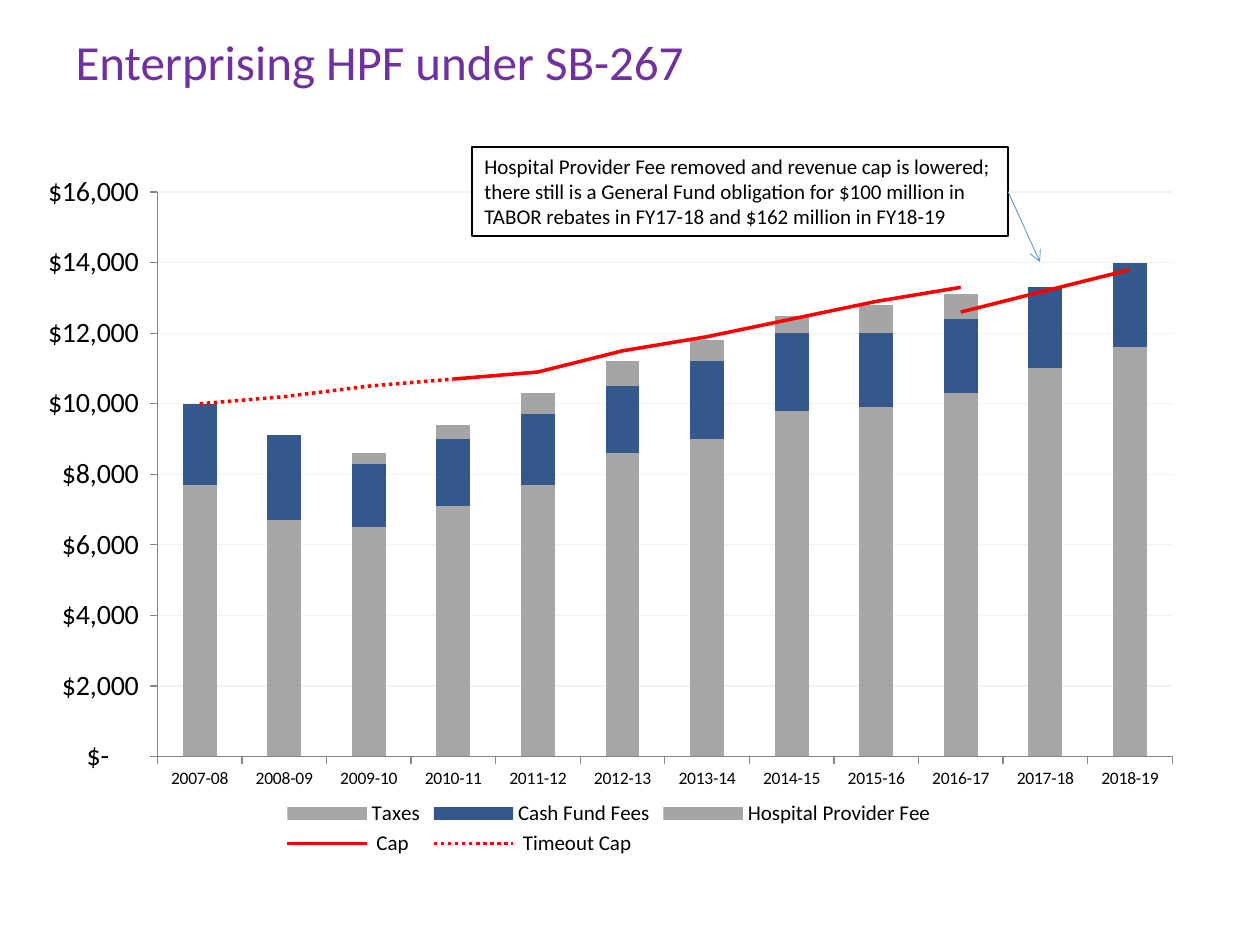
from lxml.etree import SubElement as Sub
from pptx import Presentation
from pptx.chart.data import CategoryChartData as Data
from pptx.dml.color import RGBColor as RGB
from pptx.enum.chart import XL_CHART_TYPE as Kind, XL_LEGEND_POSITION as Spot
from pptx.enum.chart import XL_MARKER_STYLE as Mark, XL_TICK_MARK as Tick
from pptx.enum.dml import MSO_LINE as Dash
from pptx.enum.shapes import MSO_CONNECTOR as Link, MSO_SHAPE as Shape
from pptx.enum.text import MSO_ANCHOR as Anchor, MSO_AUTO_SIZE as Auto, PP_ALIGN as Align
from pptx.oxml import parse_xml
from pptx.oxml.ns import nsdecls, qn
from pptx.util import Pt

SCALE = 914400 / 126
FONT = "Calibri"
MONEY = r'_("$"* #,##0_);_("$"* \(#,##0\);_("$"* "-"??_);_(@_)'
YEARS = [f"20{y:02}-{y + 1:02}" for y in range(7, 19)]
BARS = [
    ("Taxes", "A6A6A6", [7700, 6700, 6500, 7100, 7700, 8600,
                         9000, 9800, 9900, 10300, 11000, 11600]),
    ("Cash Fund Fees", "35588C", [2300, 2400, 1800, 1900, 2000, 1900,
                                  2200, 2200, 2100, 2100, 2300, 2400]),
    ("Hospital Provider Fee", "A5A5A5", [None, None, 300, 400, 600, 700,
                                         600, 500, 800, 700, 0, 0]),
]
# Each cap: name, dash, first year's index, values
CAPS = [
    (" Cap", Dash.SOLID, 3, [10700, 10900, 11500, 11900, 12400, 12900, 13300]),
    (" Timeout Cap", Dash.ROUND_DOT, 0, [10000, 10200, 10500, 10700]),
    ("SB17-267 Cap", Dash.SOLID, 9, [12600, 13200, 13800]),
]


def px(*nums):
    return [round(n * SCALE) for n in nums]


def color(code):
    return RGB.from_string(code)


def style(font, size, code="000000"):
    font.name, font.size, font.bold = FONT, Pt(size), False
    font.color.rgb = color(code)


def stroke(line, code, width):
    line.color.rgb = color(code)
    line.width = Pt(width)


def add_run(para, text, size, code):
    run = para.add_run()
    run.text = text
    style(run.font, size, code)


def add_title(slide, text):
    title = slide.shapes.title
    title.left, title.top, title.width, title.height = px(63, -14, 1134, 158)
    frame = title.text_frame
    frame.auto_size = Auto.NONE
    frame.vertical_anchor = Anchor.MIDDLE
    para = frame.paragraphs[0]
    para.alignment, para.line_spacing = Align.LEFT, 0.9
    add_run(para, text, 28, "7030A0")


def split_caps(chart):
    """Move the series after the bars into a line plot on the same axes."""
    bar = chart.plots[0]._element
    line = parse_xml(f'<c:lineChart {nsdecls("c")}><c:grouping val="standard"/>'
                     '<c:varyColors val="0"/></c:lineChart>')
    bar.addnext(line)
    for ser in bar.findall(qn("c:ser"))[len(BARS):]:
        for flag in ser.findall(qn("c:invertIfNegative")):
            ser.remove(flag)
        line.append(ser)
    Sub(line, qn("c:marker")).set("val", "1")
    for axis in bar.findall(qn("c:axId")):
        Sub(line, qn("c:axId")).set("val", axis.get("val"))


def place_plot(chart, *box):
    area = chart._chartSpace.chart.plotArea
    for old in area.findall(qn("c:layout")):
        area.remove(old)
    parts = "".join(f'<c:{tag} val="{val}"/>' for tag, val in zip("xywh", box))
    modes = '<c:xMode val="edge"/><c:yMode val="edge"/>'
    area.insert(0, parse_xml(
        f'<c:layout {nsdecls("c")}><c:manualLayout><c:layoutTarget val="inner"/>'
        f'{modes}{parts}</c:manualLayout></c:layout>'))


def set_axes(chart):
    cat, val = chart.category_axis, chart.value_axis
    for axis, size in ((cat, 10), (val, 16)):
        style(axis.tick_labels.font, size)
        axis.major_tick_mark, axis.minor_tick_mark = Tick.OUTSIDE, Tick.NONE
        stroke(axis.format.line, "868686", 0.75)
    cat.has_major_gridlines = False
    val.minimum_scale, val.maximum_scale, val.major_unit = 0, 16000, 2000
    val.tick_labels.number_format = MONEY
    val.tick_labels.number_format_is_linked = False
    stroke(val.major_gridlines.format.line, "F2F2F2", 0.75)


def set_legend(chart, hidden):
    chart.has_legend = True
    legend = chart.legend
    legend.position, legend.include_in_layout = Spot.BOTTOM, False
    style(legend.font, 12)
    entry = parse_xml(f'<c:legendEntry {nsdecls("c")}><c:idx val="{hidden}"/>'
                      '<c:delete val="1"/></c:legendEntry>')
    # An entry follows the legend position, when that is written out
    legend._element.insert(len(legend._element.findall(qn("c:legendPos"))), entry)


def add_chart(slide):
    data = Data(number_format="General")
    data.categories = YEARS
    for name, _, vals in BARS:
        data.add_series(name, vals)
    for name, _, start, vals in CAPS:
        rest = len(YEARS) - start - len(vals)
        data.add_series(name, [None] * start + vals + [None] * rest)
    chart = slide.shapes.add_chart(
        Kind.COLUMN_STACKED, *px(21, 126, 1176, 735), data).chart
    chart.has_title = False
    style(chart.font, 10)
    split_caps(chart)
    bars, lines = chart.plots
    bars.gap_width, bars.overlap, bars.vary_by_categories = 150, 100, False
    for ser, (_, code, _) in zip(bars.series, BARS):
        ser.format.fill.solid()
        ser.format.fill.fore_color.rgb = color(code)
    for ser, (_, dash, _, _) in zip(lines.series, CAPS):
        stroke(ser.format.line, "FF0000", 2)
        ser.format.line.dash_style = dash
        ser.marker.style, ser.smooth = Mark.NONE, False
    place_plot(chart, 0.116, 0.09, 0.863, 0.768)
    set_axes(chart)
    set_legend(chart, len(BARS) + len(CAPS) - 1)


def add_note(slide, text):
    note = slide.shapes.add_shape(Shape.RECTANGLE, *px(472, 147, 536, 89))
    note.shadow.inherit = False
    note.fill.solid()
    note.fill.fore_color.rgb = color("FFFFFF")
    stroke(note.line, "000000", 0.75)
    frame = note.text_frame
    frame.word_wrap, frame.auto_size = True, Auto.SHAPE_TO_FIT_TEXT
    frame.vertical_anchor = Anchor.TOP
    frame.paragraphs[0].alignment = Align.LEFT
    add_run(frame.paragraphs[0], text, 12, "000000")
    return note


def add_arrow(slide, note):
    arrow = slide.shapes.add_connector(Link.STRAIGHT, *px(1008, 192, 1040, 262))
    arrow.begin_connect(note, 3)
    stroke(arrow.line, "5B9BD5", 0.5)
    Sub(arrow.line._get_or_add_ln(), qn("a:tailEnd")).set("type", "arrow")
    Sub(arrow._element.spPr, qn("a:effectLst"))


def main():
    prs = Presentation()
    prs.slide_width, prs.slide_height = px(1260, 945)
    slide = prs.slides.add_slide(prs.slide_layouts[5])
    # Chart, then heading and callout
    add_chart(slide)
    add_title(slide, "Enterprising HPF under SB-267")
    note = add_note(slide, "Hospital Provider Fee removed and revenue cap is lowered; "
                    "there still is a General Fund obligation for $100 million in "
                    "TABOR rebates in FY17-18 and $162 million in FY18-19")
    add_arrow(slide, note)
    prs.save("out.pptx")


if __name__ == "__main__":
    main()
